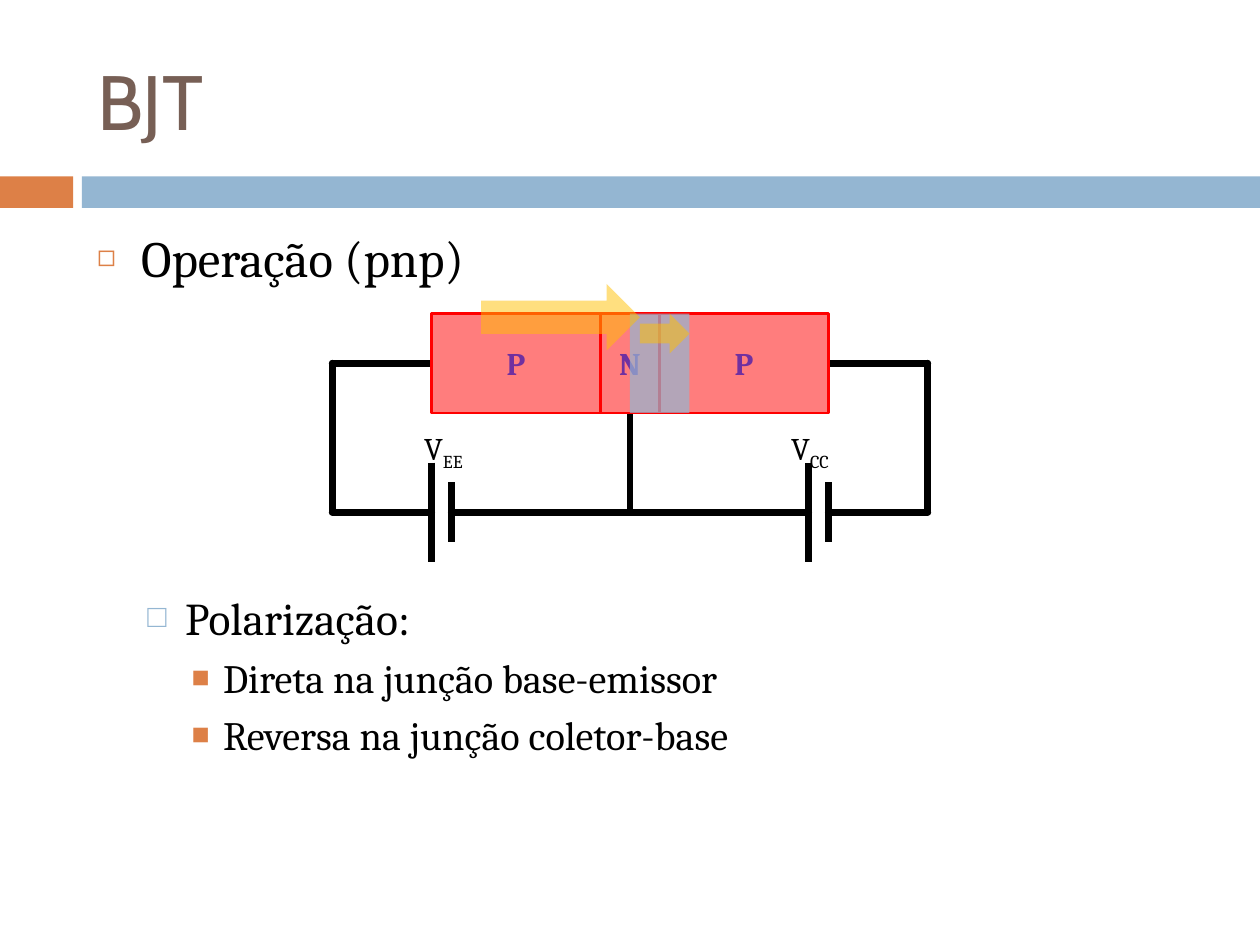
from lxml.etree import SubElement
from pptx import Presentation
from pptx.dml.color import RGBColor
from pptx.enum.shapes import MSO_CONNECTOR as Connector, MSO_SHAPE as Shape
from pptx.enum.text import MSO_ANCHOR as Anchor, MSO_AUTO_SIZE as Fit, PP_ALIGN as Align
from pptx.oxml.ns import qn
from pptx.util import Cm, Inches, Pt

rgb = RGBColor.from_string
ORANGE, BLUE, AMBER = "DD8047", "94B6D2", "FFC000"


def write(para, text, size=18, color="000000", font="Cambria", bold=False, baseline=None):
    span = para.add_run()
    span.text = text
    span.font.size, span.font.name, span.font.bold = Pt(size), font, bold
    span.font.color.rgb = rgb(color)
    if baseline:
        span.font._element.set("baseline", str(baseline * 1000))


def block(kind, left, top, width, height, fill, opacity=100, line=None):
    box = page.shapes.add_shape(kind, int(left), int(top), int(width), int(height))
    box.shadow.inherit = False
    box.fill.solid()
    box.fill.fore_color.rgb = rgb(fill)
    if opacity < 100:
        color = box._element.spPr.find(qn("a:solidFill"))[0]
        SubElement(color, qn("a:alpha"), val=str(opacity * 1000))
    if line:
        box.line.color.rgb, box.line.width = rgb(line), Pt(1.5)
    else:
        box.line.fill.background()
    return box


deck = Presentation()
deck.slide_width, deck.slide_height = Inches(10), Inches(7.5)
page = deck.slides.add_slide(deck.slide_layouts[1])

# Bars under the title
for left, width, fill in [(0, 0.58, ORANGE), (0.65, 9.35, BLUE)]:
    block(Shape.RECTANGLE, Inches(left), Inches(1.4), Inches(width), Inches(0.25), fill)

# Title and body placeholders
title, body = page.placeholders
for holder, top, height in [(title, 0.25, 1.08), (body, 1.75, 5.23)]:
    holder.left, holder.top = Inches(0.67), Inches(top)
    holder.width, holder.height = Inches(8.92), Inches(height)
    holder.text_frame.auto_size = Fit.NONE
title.text_frame.vertical_anchor = Anchor.MIDDLE
heading = title.text_frame.paragraphs[0]
heading.alignment = Align.LEFT
write(heading, "BJT", size=44, color="775F55", font="Cabin")

# Bulleted list; the wide gap before the second item holds the circuit
styles = [  # size, indent, hanging, bullet, bullet colour, bullet percent
    (29, 0.35, 0.35, "◻", ORANGE, 60),
    (26, 0.7, 0.3, "□", BLUE, 70),
    (23, 1, 0.25, "■", ORANGE, 75),
]
items = [
    (0, 7, "Operação (pnp)"),
    (1, 172.5, "Polarização:"),
    (2, 5, "Direta na junção base-emissor"),
    (2, 5, "Reversa na junção coletor-base"),
]
for index, (level, gap, text) in enumerate(items):
    frame = body.text_frame
    para = frame.add_paragraph() if index else frame.paragraphs[0]
    size, indent, hanging, bullet, color, percent = styles[level]
    para.level, para.space_before = level, Pt(gap)
    props = para._p.get_or_add_pPr()
    props.set("marL", str(Inches(indent)))
    props.set("indent", str(-Inches(hanging)))
    SubElement(SubElement(props, qn("a:buClr")), qn("a:srgbClr"), val=color)
    SubElement(props, qn("a:buSzPct"), val=str(percent * 1000))
    SubElement(props, qn("a:buChar"), char=bullet)
    write(para, text, size=size)

# Circuit grid: columns count from the slide's centre, rows from the transistor's top
CELL = Cm(0.4)
CENTER, TOP = deck.slide_width / 2, Inches(2.49)

# Wires and battery plates: from column, row, to column, row
wires = [(0, 5, 0, 10)]
plates = []
for side, label_column, name in [(1, 7.5, "CC"), (-1, -11, "EE")]:
    long_plate, short_plate = (9, 10) if side > 0 else (-10, -9)
    inner, outer = sorted((long_plate, short_plate), key=abs)
    wires += [
        (15 * side, 2.5, 10 * side, 2.5),
        (15 * side, 2.5, 15 * side, 10),
        (outer, 10, 15 * side, 10),
        (inner, 10, 0, 10),
    ]
    plates += [(long_plate, 7.5, long_plate, 12.5), (short_plate, 8.5, short_plate, 11.5)]
    label = page.shapes.add_textbox(int(CENTER + label_column * CELL),
                                    int(TOP + 5.5 * CELL), Inches(0.58), Inches(0.4))
    label.text_frame.word_wrap = False
    label.text_frame.auto_size = Fit.SHAPE_TO_FIT_TEXT
    para = label.text_frame.paragraphs[0]
    write(para, "V")
    write(para, name, baseline=-25)

for cap, lines in [("rnd", wires), ("flat", plates)]:
    for x1, y1, x2, y2 in lines:
        wire = page.shapes.add_connector(
            Connector.STRAIGHT, int(CENTER + x1 * CELL), int(TOP + y1 * CELL),
            int(CENTER + x2 * CELL), int(TOP + y2 * CELL))
        wire.line.color.rgb, wire.line.width = rgb("000000"), Pt(4)
        wire.line._get_or_add_ln().set("cap", cap)
        SubElement(wire._element.spPr, qn("a:effectLst"))

# Transistor regions
for column, width, name in [(-10, 8.5, "P"), (-1.5, 3, "N"), (1.5, 8.5, "P")]:
    region = block(Shape.RECTANGLE, CENTER + column * CELL, TOP, width * CELL, 5 * CELL,
                   "FF7D7D", line="FF0000")
    region.text_frame.vertical_anchor = Anchor.MIDDLE
    para = region.text_frame.paragraphs[0]
    para.alignment = Align.CENTER
    write(para, name, color="7030A0", bold=True)

# Depletion layer and carrier flow
for kind, column, row, width, height, fill, opacity in [
    (Shape.RECTANGLE, 0, 0, 3, 5, BLUE, 70),
    (Shape.RIGHT_ARROW, 0.5, 0, 2.5, 2, AMBER, 50),
    (Shape.RIGHT_ARROW, -7.5, -1.5, 8, 3.35, AMBER, 50),
]:
    block(kind, CENTER + column * CELL, TOP + row * CELL, width * CELL, height * CELL,
          fill, opacity=opacity)

deck.save("out.pptx")
